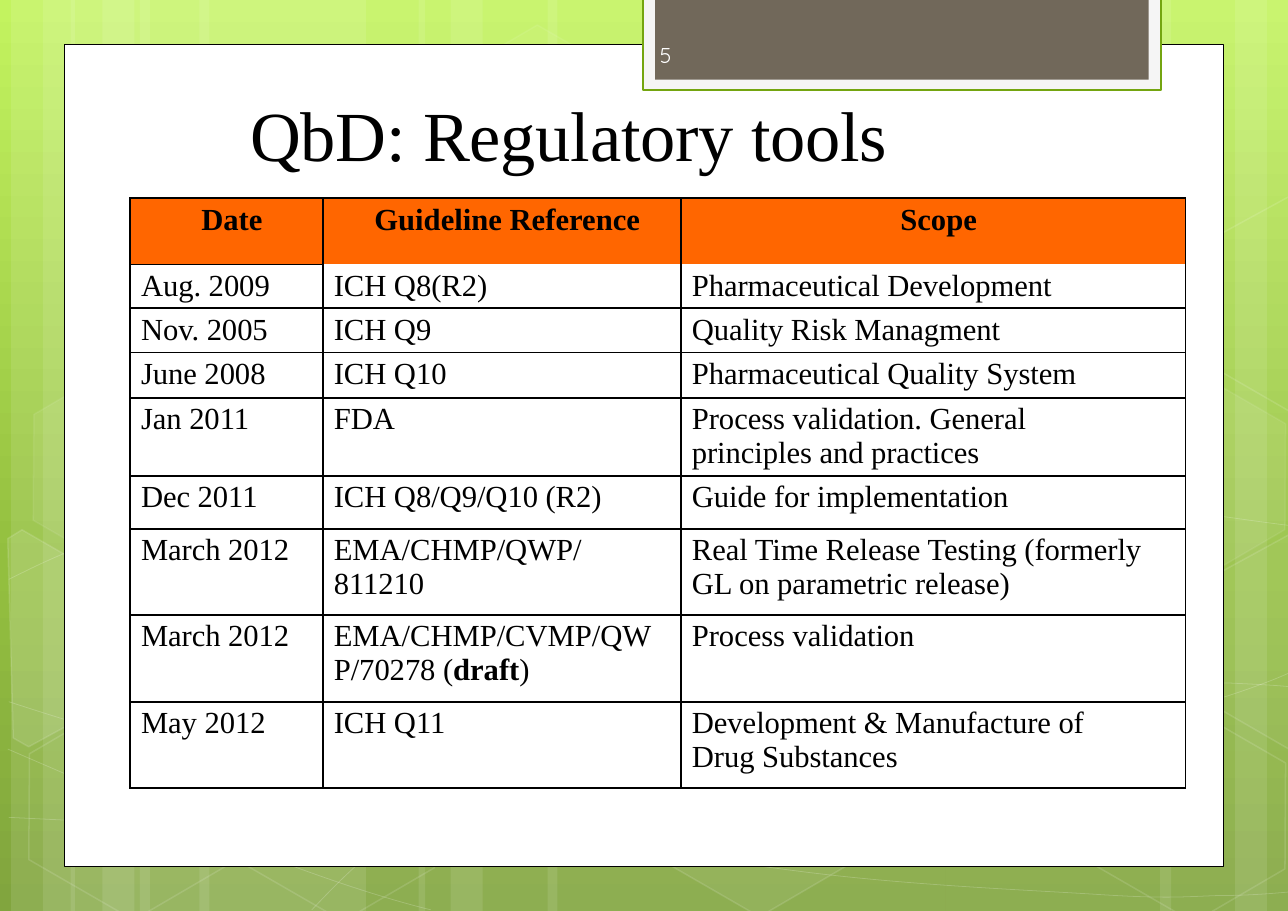
"""Build the slide on regulatory tools for Quality by Design."""
from lxml.etree import SubElement
from copy import deepcopy
from pptx import Presentation
from pptx.dml.color import RGBColor
from pptx.enum.shapes import MSO_SHAPE as SHAPE
from pptx.enum.text import MSO_ANCHOR as ANCHOR, PP_ALIGN as ALIGN
from pptx.oxml.ns import qn
from pptx.util import Inches, Pt

WHITE = RGBColor(0xFF, 0xFF, 0xFF)
BLACK = RGBColor(0x00, 0x00, 0x00)
ORANGE = RGBColor(0xFF, 0x66, 0x00)
LIGHT_GREY = RGBColor(0xF5, 0xF5, 0xF5)
TAUPE = RGBColor(0x71, 0x68, 0x5A)
GREEN = RGBColor(0x74, 0xA5, 0x10)
NUMBER_WHITE = RGBColor(0xFE, 0xFE, 0xFE)
SKY = [(0, RGBColor(0xC3, 0xF3, 0x5F)), (0.62, RGBColor(0x93, 0xBF, 0x3F)),
       (1, RGBColor(0x81, 0xA5, 0x3E))]
SERIF = "Times New Roman"
GRID = Inches(0.01)
COLUMNS, ROWS = 1169, 827


def scaled(*steps):
    return [round(step * GRID) for step in steps]


def paint(shape, fill=None, edge=None, width=1, fill_share=100, edge_share=100):
    shape.shadow.inherit = False
    if fill is None:
        shape.fill.background()
    else:
        shape.fill.solid()
        shape.fill.fore_color.rgb = fill
    if edge is None:
        shape.line.fill.background()
    else:
        shape.line.color.rgb = edge
        shape.line.width = Pt(width)
    solid = qn("a:solidFill") + "/" + qn("a:srgbClr")
    for place, share in ((solid, fill_share), (qn("a:ln") + "/" + solid, edge_share)):
        colour = shape._element.spPr.find(place)
        if colour is not None and share < 100:
            SubElement(colour, qn("a:alpha"), val=str(share * 1000))


deck = Presentation()
deck.slide_width, deck.slide_height = scaled(COLUMNS, ROWS)
slide = deck.slides.add_slide(deck.slide_layouts[6])
shapes = slide.shapes

sky = slide.background.fill
sky.gradient()
sky.gradient_angle = 270
stops = slide._element.find(".//" + qn("a:gsLst"))
stops.append(deepcopy(stops[0]))
for stop, (position, colour) in zip(sky.gradient_stops, SKY):
    stop.position = position
    stop.color.rgb = colour

for left, width in [(127, 205), (10, 58), (39, 97), (181, 205), (64, 58), (93, 97),
                    (858, 205), (1121, 48), (1053, 97), (497, 361), (380, 58), (409, 97)]:
    band = shapes.add_shape(SHAPE.RECTANGLE, *scaled(left, 0, width, ROWS))
    paint(band, WHITE, fill_share=10)

waves = [
    [(8, 742), (72, 745), (135, 749), (223, 748), (310, 746), (418, 744), (535, 733),
     (653, 722), (819, 701), (926, 680), (1033, 659), (1142, 626), (1178, 607)],
    [(8, 526), (42, 509), (76, 492), (142, 475), (208, 459), (303, 435), (406, 427),
     (510, 419), (636, 418), (765, 427), (893, 435), (1108, 470), (1178, 478)],
    [(7, 680), (148, 741), (289, 801), (391, 826)],
    [(8, 637), (45, 649), (82, 661), (150, 679), (218, 696), (319, 723), (417, 742),
     (514, 761), (638, 780), (734, 792), (831, 804), (935, 808), (997, 812),
     (1059, 816), (1075, 814), (1105, 813), (1135, 813), (1156, 811), (1178, 809)],
    [(283, 826), (304, 804), (325, 782), (353, 762), (382, 742), (421, 720), (453, 705),
     (486, 690), (506, 683), (549, 672), (592, 660), (671, 645), (712, 637),
     (753, 630), (759, 630), (795, 627), (831, 624), (889, 621), (929, 620),
     (969, 619), (1037, 620), (1037, 620), (1063, 620), (1088, 620), (1114, 620),
     (1136, 621), (1155, 622), (1166, 623), (1176, 624), (1173, 623), (1176, 624)],
]
for wave in waves:
    outline = shapes.build_freeform(*scaled(*wave[0]))
    outline.add_line_segments([scaled(*point) for point in wave[1:]], close=False)
    curve = outline.convert_to_shape()
    track = curve._element.spPr.find(".//" + qn("a:pathLst"))[0]
    segments = track.findall(qn("a:lnTo"))
    for first in range(0, len(segments), 3):
        bend = SubElement(track, qn("a:cubicBezTo"))
        for segment in segments[first:first + 3]:
            bend.append(segment[0])
            track.remove(segment)
    paint(curve, edge=WHITE, width=0.5, edge_share=20)

for left, top, fill_share, edge_share in [
        (391, 39, 4, 8), (581, 649, 6, 12), (13, 652, 0, 12), (17, 344, 7, 8),
        (203, 653, 0, 12), (880, 500, 10, 12), (975, 654, 0, 12), (975, 346, 7, 8)]:
    hexagon = shapes.add_shape(SHAPE.HEXAGON, *scaled(left, top, 205, 167))
    hexagon.adjustments[0], hexagon.adjustments[1] = 0.285, 1.155
    hexagon.rotation = 30
    paint(hexagon, WHITE if fill_share else None, WHITE, 1, fill_share, edge_share)

for fill_share, corners in [
        (10, [(7, 489), (20, 481), (110, 533), (112, 631), (26, 678), (12, 670)]),
        (4, [(1083, 533), (1169, 486), (1177, 491), (1183, 679), (1175, 683), (1085, 631)]),
        (0, [(1083, 226), (1169, 179), (1178, 185), (1183, 371), (1175, 376), (1085, 324)])]:
    outline = shapes.build_freeform(*scaled(*corners[0]))
    outline.add_line_segments([scaled(*corner) for corner in corners[1:]])
    paint(outline.convert_to_shape(), WHITE if fill_share else None, WHITE, 1, fill_share, 12)

for place, fill, edge, width in [((58.4, 40.2, 1052.4, 746), WHITE, BLACK, 0.5),
                                 ((583.4, -2.6, 470.6, 84), LIGHT_GREY, GREEN, 1.25),
                                 ((594.6, -2.6, 448, 75), TAUPE, None, 0)]:
    paint(shapes.add_shape(SHAPE.RECTANGLE, *scaled(*place)), fill, edge, width)

for words, place, indent, anchor, size, face, colour, spacing in [
        ("QbD: Regulatory tools", (35, 80, 898, 79), 192, ANCHOR.BOTTOM, 46, SERIF, BLACK, -10),
        ("5", (595, 27, 170, 44), 4, ANCHOR.MIDDLE, 14, "Quicksand", NUMBER_WHITE, 0)]:
    frame = shapes.add_textbox(*scaled(*place)).text_frame
    frame.word_wrap = True
    frame.vertical_anchor = anchor
    frame.margin_left, frame.margin_top, frame.margin_right, frame.margin_bottom = scaled(
        indent, 1, 0, 0)
    run = frame.paragraphs[0].add_run()
    run.text = words
    run.font.size, run.font.name = Pt(size), face
    run.font.color.rgb = colour
    run.font._element.set("spc", str(spacing))

guidelines = [
    ("Date", "Guideline Reference", "Scope"),
    ("Aug. 2009", "ICH Q8(R2)", "Pharmaceutical Development"),
    ("Nov. 2005", "ICH Q9", "Quality Risk Managment"),
    ("June 2008", "ICH Q10", "Pharmaceutical Quality System"),
    ("Jan 2011", "FDA", "Process validation. General|principles and practices"),
    ("Dec 2011", "ICH Q8/Q9/Q10 (R2)", "Guide for implementation"),
    ("March 2012", "EMA/CHMP/QWP/|811210",
     "Real Time Release Testing (formerly GL on parametric release)"),
    ("March 2012", "EMA/CHMP/CVMP/QW\nP/70278 (*draft*)", "Process validation"),
    ("May 2012", "ICH Q11", "Development & Manufacture of|Drug Substances"),
]
column_widths = scaled(175, 325, 458)
row_heights = scaled(60, 40, 40, 41, 71, 48, 78, 79, 78)
table = shapes.add_table(len(row_heights), len(column_widths), *scaled(118, 180, 958, 535)).table
table._tbl.tblPr.find(qn("a:tableStyleId")).text = "{2D5ABB26-0587-4C30-8999-92F81FD0307C}"
table.horz_banding = False
for column, width in zip(table.columns, column_widths):
    column.width = width
for row, height in zip(table.rows, row_heights):
    row.height = height

for r, guideline in enumerate(guidelines):
    for c, words in enumerate(guideline):
        cell = table.cell(r, c)
        right_margin = 4 if r == 6 else 0
        cell.margin_left, cell.margin_top, cell.margin_right, cell.margin_bottom = scaled(
            10, 4, right_margin, 0)
        below_header = 1 if c == 0 else 0
        borders = {"L": 1.5 if c < 2 else 0.95, "R": 1.5 if c == 0 else 0.95,
                   "T": below_header if r == 1 else 1.5, "B": below_header if r == 0 else 1.5}
        for side, width in borders.items():
            border = SubElement(cell._tc.tcPr, qn("a:ln" + side), w=str(Pt(width)))
            if width:
                SubElement(SubElement(border, qn("a:solidFill")), qn("a:srgbClr"), val=str(BLACK))
            else:
                SubElement(border, qn("a:noFill"))
        if r == 0:
            cell.fill.solid()
            cell.fill.fore_color.rgb = ORANGE
        else:
            cell.fill.background()
        for number, entry in enumerate(words.split("\n")):
            frame = cell.text_frame
            paragraph = frame.add_paragraph() if number else frame.paragraphs[0]
            paragraph.alignment = ALIGN.CENTER if r == 0 else ALIGN.LEFT
            for order, line in enumerate(entry.split("|")):
                if order:
                    paragraph.add_line_break()
                for part, piece in enumerate(line.split("*")):
                    run = paragraph.add_run()
                    run.text = piece
                    run.font.size, run.font.name = Pt(20), SERIF
                    run.font.bold = r == 0 or part == 1
                    run.font.color.rgb = BLACK
                    run.font._element.set("spc", "0" if r == 0 else "-5")

deck.save("out.pptx")
